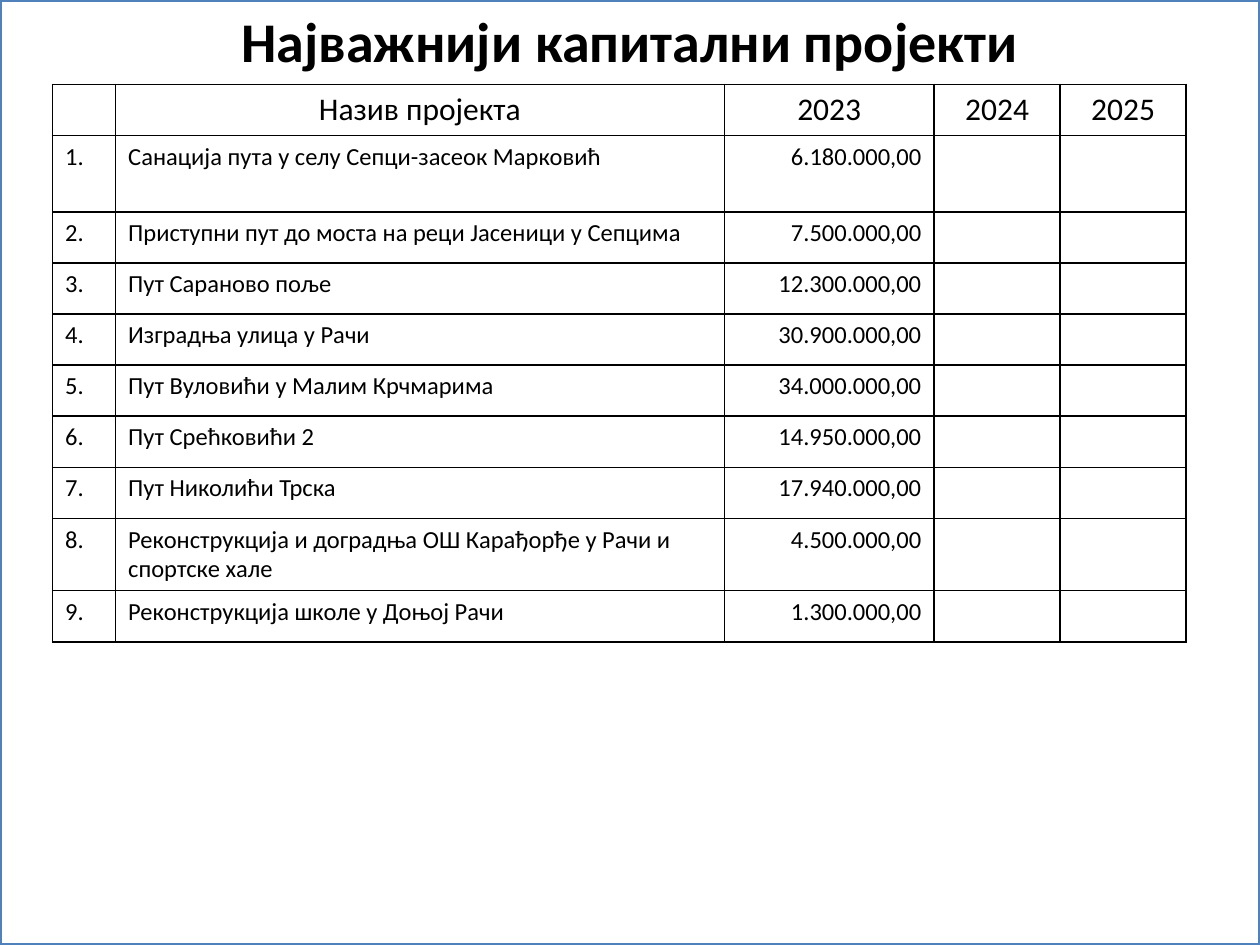
import pptx
import pptx.dml.color
import pptx.enum.text
import pptx.oxml.ns
import pptx.util
from lxml import etree

Cm, Pt = pptx.util.Cm, pptx.util.Pt
ALIGN = pptx.enum.text.PP_ALIGN
BLACK = pptx.dml.color.RGBColor(0x00, 0x00, 0x00)
WHITE = pptx.dml.color.RGBColor(0xFF, 0xFF, 0xFF)
BLUE = pptx.dml.color.RGBColor(0x4F, 0x81, 0xBD)

HEADERS = ["", "Назив пројекта", "2023", "2024", "2025"]
PROJECTS = [
    ("Санација пута у селу Сепци-засеок Марковић", "6.180.000,00"),
    ("Приступни пут до моста на реци Јасеници у Сепцима", "7.500.000,00"),
    ("Пут Сараново поље", "12.300.000,00"),
    ("Изградња улица у Рачи", "30.900.000,00"),
    ("Пут Вуловићи у Малим Крчмарима", "34.000.000,00"),
    ("Пут Срећковићи 2", "14.950.000,00"),
    ("Пут Николићи Трска", "17.940.000,00"),
    ("Реконструкција и доградња ОШ Карађорђе у Рачи и спортске хале", "4.500.000,00"),
    ("Реконструкција школе у Доњој Рачи", "1.300.000,00"),
]
COLUMN_WIDTHS = [1.27, 12.27, 4.23, 2.54, 2.54]
ROW_HEIGHT = 1.03
TALL_ROWS = {1: 1.54, 8: 1.45}


def write_text(text_frame, text, size=14, bold=False, align=ALIGN.LEFT):
    paragraph = text_frame.paragraphs[0]
    paragraph.alignment = align
    run = paragraph.add_run()
    run.text = text
    run.font.name = "Calibri"
    run.font.size = Pt(size)
    run.font.bold = bold
    run.font.color.rgb = BLACK


def add_borders(cell, color, width):
    properties = cell._tc.get_or_add_tcPr()
    for side in ("a:lnL", "a:lnR", "a:lnT", "a:lnB"):
        line = etree.SubElement(properties, pptx.oxml.ns.qn(side), w=str(width))
        fill = etree.SubElement(line, pptx.oxml.ns.qn("a:solidFill"))
        etree.SubElement(fill, pptx.oxml.ns.qn("a:srgbClr"), val=str(color))


presentation = pptx.Presentation()
presentation.slide_width = Cm(25.4)
presentation.slide_height = Cm(19.05)
slide = presentation.slides.add_slide(presentation.slide_layouts[5])

# Title, framing the whole slide
title = slide.shapes.title
title.left, title.top = Cm(0), Cm(0)
title.width, title.height = presentation.slide_width, presentation.slide_height
title.fill.solid()
title.fill.fore_color.rgb = WHITE
title.line.color.rgb = BLUE
title.line.width = Pt(2)
title.text_frame.word_wrap = True
title.text_frame.auto_size = pptx.enum.text.MSO_AUTO_SIZE.NONE
title.text_frame.vertical_anchor = pptx.enum.text.MSO_ANCHOR.TOP
write_text(title.text_frame, "Најважнији капитални пројекти", size=32, bold=True, align=ALIGN.CENTER)
title.text_frame.paragraphs[0].space_before = Pt(2)

# Table grid
row_heights = [TALL_ROWS.get(row, ROW_HEIGHT) for row in range(len(PROJECTS) + 1)]
table = slide.shapes.add_table(
    len(row_heights), len(COLUMN_WIDTHS), Cm(1.06), Cm(1.7),
    Cm(sum(COLUMN_WIDTHS)), Cm(sum(row_heights)),
).table
table.first_row = False
table.horz_banding = False
for column, width in zip(table.columns, COLUMN_WIDTHS):
    column.width = Cm(width)
for row, height in zip(table.rows, row_heights):
    row.height = Cm(height)
for cell in table.iter_cells():
    add_borders(cell, BLACK, Pt(1))
    cell.fill.background()

# Header row
for column, header in enumerate(HEADERS):
    if header:
        write_text(table.cell(0, column).text_frame, header, size=18, align=ALIGN.CENTER)

# Project rows
for number, (project, amount) in enumerate(PROJECTS, start=1):
    write_text(table.cell(number, 0).text_frame, f"{number}.")
    write_text(table.cell(number, 1).text_frame, project)
    write_text(table.cell(number, 2).text_frame, amount, align=ALIGN.RIGHT)

presentation.save("out.pptx")
